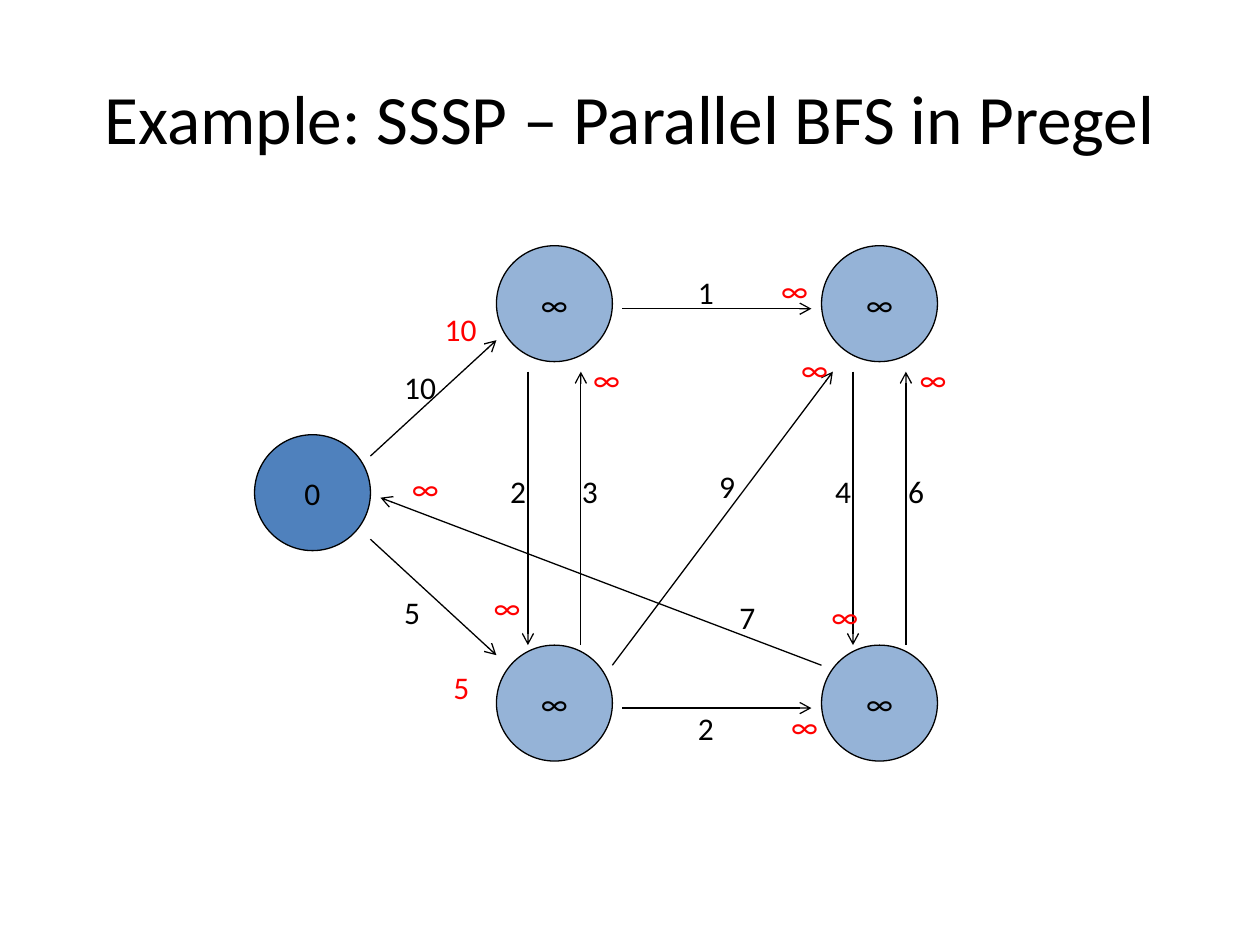
from typing import NamedTuple

import pptx
import pptx.dml.color
import pptx.enum.shapes
import pptx.enum.text
import pptx.oxml
import pptx.oxml.ns
import pptx.util
from pptx.util import Inches

RGBColor = pptx.dml.color.RGBColor
BLACK = RGBColor(0x00, 0x00, 0x00)
RED = RGBColor(0xFF, 0x00, 0x00)
SOURCE_BLUE = RGBColor(0x4F, 0x81, 0xBD)
VERTEX_BLUE = RGBColor(0x95, 0xB3, 0xD7)

FONT = "Calibri"
DIAMETER = 0.92
LEFT_COLUMN, RIGHT_COLUMN = 3.94, 6.52
TOP_ROW, BOTTOM_ROW = 1.95, 5.12
BELOW_TOP_ROW = 2.95
CENTER = pptx.enum.text.PP_ALIGN.CENTER
LEFT = pptx.enum.text.PP_ALIGN.LEFT


class Vertex(NamedTuple):
    left: float
    top: float
    distance: str = "∞"
    fill: RGBColor = VERTEX_BLUE


class Edge(NamedTuple):
    start: tuple[float, float]
    end: tuple[float, float]


class Label(NamedTuple):
    text: str
    left: float
    top: float


VERTICES = [
    Vertex(2.02, 3.45, "0", SOURCE_BLUE),
    *(Vertex(left, top) for left in (LEFT_COLUMN, RIGHT_COLUMN)
      for top in (TOP_ROW, BOTTOM_ROW)),
]

EDGES = [
    # Out of the source vertex
    Edge((2.94, 4.28), (3.94, 5.2)),
    Edge((2.94, 3.62), (3.94, 2.7)),
    # Along the rows
    *(Edge((4.94, top + 0.5), (6.44, top + 0.5)) for top in (BOTTOM_ROW, TOP_ROW)),
    # Diagonals
    Edge((4.86, 5.28), (6.61, 2.95)),
    Edge((6.52, 5.28), (3.02, 3.95)),
]
# Up and down each column
for column in (LEFT_COLUMN, RIGHT_COLUMN):
    up, down = column + 0.67, column + 0.25
    EDGES.append(Edge((up, BOTTOM_ROW), (up, BELOW_TOP_ROW)))
    EDGES.append(Edge((down, BELOW_TOP_ROW), (down, BOTTOM_ROW)))

WEIGHTS = [
    Label("10", 3.11, 2.87), Label("5", 3.11, 4.66),
    Label("2", 3.95, 3.7), Label("3", 4.52, 3.7),
    Label("2", 5.44, 5.58), Label("1", 5.44, 2.12),
    Label("9", 5.61, 3.66), Label("7", 5.77, 4.7),
    Label("4", 6.53, 3.7), Label("6", 7.11, 3.7),
]

MESSAGES = [
    Label("10", 3.43, 2.41), Label("5", 3.5, 5.25),
    Label("∞", 3.17, 3.67), Label("∞", 3.82, 4.62),
    Label("∞", 4.61, 2.81), Label("∞", 6.1, 2.1),
    Label("∞", 6.18, 5.56), Label("∞", 6.26, 2.73),
    Label("∞", 6.5, 4.69), Label("∞", 7.2, 2.81),
]


def set_text(shape, text: str, color: RGBColor, alignment, size: float = 18) -> None:
    shape.text_frame.text = text
    paragraph = shape.text_frame.paragraphs[0]
    paragraph.alignment = alignment
    font = paragraph.runs[0].font
    font.name = FONT
    font.size = pptx.util.Pt(size)
    font.color.rgb = color


def draw_vertex(shapes, vertex: Vertex) -> None:
    shape = shapes.add_shape(
        pptx.enum.shapes.MSO_SHAPE.OVAL, Inches(vertex.left), Inches(vertex.top),
        Inches(DIAMETER), Inches(DIAMETER))
    shape.shadow.inherit = False
    shape.fill.solid()
    shape.fill.fore_color.rgb = vertex.fill
    shape.line.color.rgb = BLACK
    shape.line.width = pptx.util.Pt(0.75)
    set_text(shape, vertex.distance, BLACK, CENTER)
    shape.text_frame.vertical_anchor = pptx.enum.text.MSO_ANCHOR.MIDDLE


def draw_edge(shapes, edge: Edge) -> None:
    connector = shapes.add_connector(
        pptx.enum.shapes.MSO_CONNECTOR.STRAIGHT,
        *(Inches(value) for value in (*edge.start, *edge.end)))
    connector.line.color.rgb = BLACK
    connector.line.width = pptx.util.Pt(0.75)
    # Open arrowhead at the end, and no shadow
    arrowhead = pptx.oxml.parse_xml(
        f'<a:tailEnd {pptx.oxml.ns.nsdecls("a")} type="arrow"/>')
    connector.line._get_or_add_ln().append(arrowhead)
    no_effects = pptx.oxml.parse_xml(f'<a:effectLst {pptx.oxml.ns.nsdecls("a")}/>')
    connector._element.spPr.append(no_effects)


def draw_label(shapes, label: Label, color: RGBColor, height: float) -> None:
    width = {"10": 0.45, "∞": 0.38}.get(label.text, 0.33)
    box = shapes.add_textbox(
        Inches(label.left), Inches(label.top), Inches(width), Inches(height))
    set_text(box, label.text, color, CENTER if label.text == "∞" else LEFT)
    box.text_frame.word_wrap = False
    box.text_frame.auto_size = pptx.enum.text.MSO_AUTO_SIZE.SHAPE_TO_FIT_TEXT


def main() -> None:
    presentation = pptx.Presentation()
    presentation.slide_width = Inches(10)
    presentation.slide_height = Inches(7.5)
    slide = presentation.slides.add_slide(presentation.slide_layouts[5])

    # Title
    title = slide.shapes.title
    title.left, title.top = Inches(0.5), Inches(0.3)
    title.width, title.height = Inches(9), Inches(1.25)
    set_text(title, "Example: SSSP – Parallel BFS in Pregel", BLACK, CENTER, 39.6)
    title.text_frame.vertical_anchor = pptx.enum.text.MSO_ANCHOR.MIDDLE

    # Weighted graph
    graph = slide.shapes.add_group_shape().shapes
    for vertex in VERTICES:
        draw_vertex(graph, vertex)
    for edge in EDGES:
        draw_edge(graph, edge)
    for weight in WEIGHTS:
        draw_label(graph, weight, BLACK, 0.37)

    # Messages sent along the edges
    for message in MESSAGES:
        draw_label(slide.shapes, message, RED, 0.4)

    presentation.save("out.pptx")


if __name__ == "__main__":
    main()
